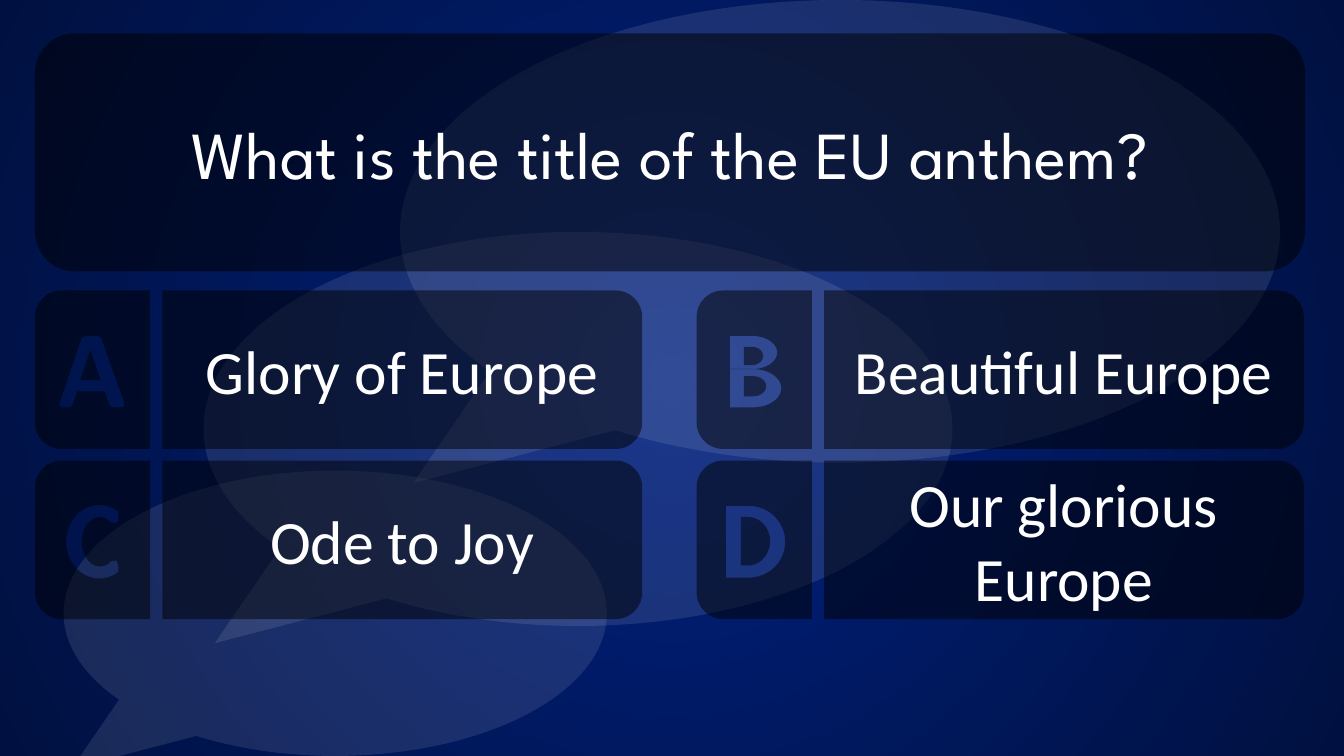
"""Build a quiz slide with a question, four lettered answers and speech bubbles."""
from math import cos, radians, sin

from lxml import etree
from pptx import Presentation
from pptx import util as u
from pptx.dml.color import RGBColor
from pptx.enum import shapes, text
from pptx.oxml.ns import qn

SIZE = (960, 540)
BACKGROUND = ["00217F", "001040"]
BUBBLES = [(45.4, 336.2, 388.1, 203.8), (145.4, 165.6, 535, 281.5), (285.8, 0, 628.6, 330.5)]
BUBBLE_TAIL = (-0.485, 0.544)
QUESTION = "What is the title of the EU anthem?"
QUESTION_BOX = (25, 23.8, 907.2, 170)
QUESTION_FORMAT = {"size": u.Pt(48), "name": "League Spartan"}
ANSWERS = [("A", "Glory of Europe"), ("B", "Beautiful Europe"),
           ("C", "Ode to Joy"), ("D", "Our glorious Europe")]
ANSWER_FORMAT = {"size": u.Pt(44), "name": "Calibri"}
COLUMNS, ROWS = (25, 497.6), (207.5, 329)
TAB_WIDTH, PANEL_OFFSET, PANEL_WIDTH, HEIGHT, RADIUS = 82.3, 91, 342.7, 113.2, 19


def arc(x, y, across, down, start, end, steps=24):
    angles = [radians(start + (end - start) * i / steps) for i in range(steps + 1)]
    return [(x + across * cos(a), y + down * sin(a)) for a in angles]


def bowl(left, x, y, across, down):
    return [(left, y - down), *arc(x, y, across, down, -90, 90), (left, y + down)]


LETTERS = {
    "A": [[(33.1, 34.6), (34.6, 33.1), (37, 32.4), (43.9, 32.4), (46.4, 33.1), (47.5, 34.6),
           (63.4, 79.2), (63.6, 83), (59, 83.5), (54.7, 83.5), (53.3, 82), (49.7, 72),
           (30.2, 72), (26.6, 82), (25, 83.5), (18.7, 83.5), (17.3, 82.1), (18, 79.2)],
          [(39.6, 42.5), (46.8, 64), (32.4, 64)]],
    "B": [bowl(23.8, 39.6, 44.3, 18, 11.9) + bowl(23.8, 40.3, 69.8, 20.2, 13.7),
          bowl(33.8, 39.6, 46.8, 7.9, 6.5),
          bowl(33.8, 40.3, 68.4, 9.4, 7.2)],
    "C": [arc(46, 58, 23.8, 26.3, -55, -305) + [(59.6, 75.6), (58.4, 71.4)]
          + arc(46.4, 58, 13, 17.6, -308, -52) + [(58.4, 44.6), (59.6, 42.5)]],
    "D": [bowl(20.9, 37.4, 58, 25.9, 25.6), bowl(31.7, 36.7, 57.6, 15.8, 17.3)],
}


def color(value):
    return RGBColor.from_string(value)


def paint(shape, value, opacity):
    shape.shadow.inherit = False
    shape.fill.solid()
    shape.fill.fore_color.rgb = color(value)
    shape.line.fill.background()
    tint = shape.element.spPr.find(".//" + qn("a:srgbClr"))
    etree.SubElement(tint, qn("a:alpha"), val=str(opacity * 1000))


def add_preset(page, kind, box, value, opacity):
    shape = page.shapes.add_shape(kind, *[u.Pt(n) for n in box])
    paint(shape, value, opacity)
    return shape


def add_outline(page, left, top, contours):
    placed = [[(u.Pt(left + x), u.Pt(top + y)) for x, y in points] for points in contours]
    builder = page.shapes.build_freeform(*placed[0][0])
    for number, points in enumerate(placed):
        if number:
            builder.move_to(*points[0])
        builder.add_line_segments(points[1:], close=True)
    shape = builder.convert_to_shape()
    paint(shape, "000000", 50)
    return shape


def write(shape, words, values):
    frame = shape.text_frame
    frame.word_wrap = True
    frame.vertical_anchor = text.MSO_ANCHOR.MIDDLE
    para = frame.paragraphs[0]
    para.alignment = text.PP_ALIGN.CENTER
    span = para.add_run()
    span.text = words
    for name, value in values.items():
        setattr(span.font, name, value)
    span.font.color.rgb = color("FFFFFF")


def paint_background(page):
    fill = page.background.fill
    fill.gradient()
    for stop, value in zip(fill.gradient_stops, BACKGROUND):
        stop.color.rgb = color(value)
    linear = page.element.find(".//" + qn("a:lin"))
    radial = etree.Element(qn("a:path"), path="circle")
    etree.SubElement(radial, qn("a:fillToRect"), dict.fromkeys("ltrb", "50000"))
    linear.getparent().replace(linear, radial)


def main():
    deck = Presentation()
    deck.slide_width, deck.slide_height = [u.Pt(n) for n in SIZE]
    page = deck.slides.add_slide(deck.slide_layouts[6])
    paint_background(page)

    for box in BUBBLES:
        bubble = add_preset(page, shapes.MSO_SHAPE.OVAL_CALLOUT, box, "FFFFFF", 10)
        for i, value in enumerate(BUBBLE_TAIL):
            bubble.adjustments[i] = value

    low, right = HEIGHT - RADIUS, PANEL_WIDTH - RADIUS
    tab_outline = [*arc(RADIUS, RADIUS, RADIUS, RADIUS, 180, 270), (TAB_WIDTH, 0),
                   (TAB_WIDTH, HEIGHT), *arc(RADIUS, low, RADIUS, RADIUS, 90, 180)]
    panel_outline = [(0, 0), *arc(right, RADIUS, RADIUS, RADIUS, -90, 0),
                     *arc(right, low, RADIUS, RADIUS, 0, 90), (0, HEIGHT)]
    for i, (letter, answer) in enumerate(ANSWERS):
        left, top = COLUMNS[i % 2], ROWS[i // 2]
        panel = add_outline(page, left + PANEL_OFFSET, top, [panel_outline])
        write(panel, answer, ANSWER_FORMAT)
        add_outline(page, left, top, [tab_outline, *LETTERS[letter]])

    question = add_preset(page, shapes.MSO_SHAPE.ROUNDED_RECTANGLE, QUESTION_BOX, "000000", 50)
    write(question, QUESTION, QUESTION_FORMAT)
    deck.save("out.pptx")


if __name__ == "__main__":
    main()
